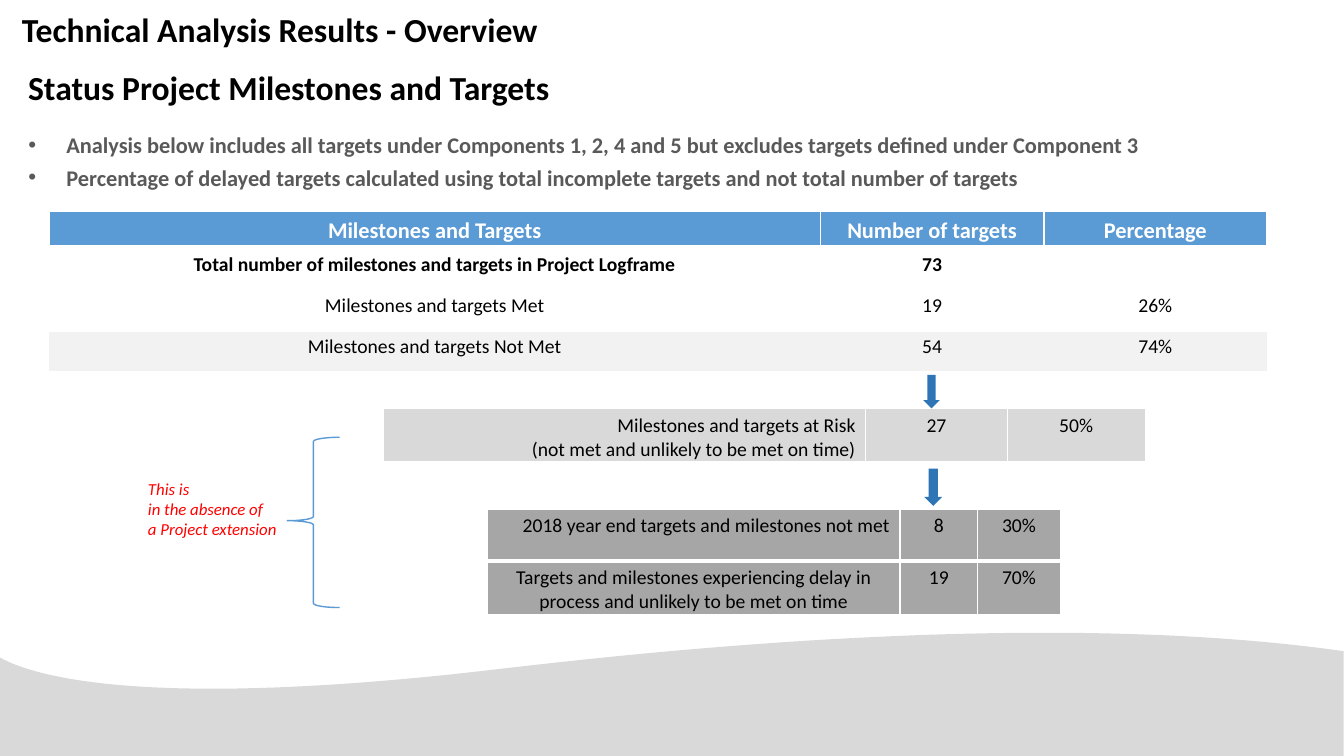
"""Build the overview slide on the status of project milestones and targets."""
from lxml.etree import SubElement
from pptx import Presentation
from pptx.dml.color import RGBColor
from pptx.enum.shapes import MSO_SHAPE
from pptx.enum.text import MSO_ANCHOR, MSO_AUTO_SIZE, PP_ALIGN
from pptx.oxml.ns import qn
from pptx.util import Cm, Pt

BLACK = RGBColor(0x00, 0x00, 0x00)
WHITE = RGBColor(0xFF, 0xFF, 0xFF)
RED = RGBColor(0xFF, 0x00, 0x00)
BLUE = RGBColor(0x5B, 0x9B, 0xD5)
DARK_BLUE = RGBColor(0x2E, 0x75, 0xB6)
TEXT_GREY = RGBColor(0x59, 0x59, 0x59)
PALE_GREY = RGBColor(0xF2, 0xF2, 0xF2)
LIGHT_GREY = RGBColor(0xD9, 0xD9, 0xD9)
MID_GREY = RGBColor(0xA6, 0xA6, 0xA6)
FONT = "Calibri"
CENTER, RIGHT, LEFT = PP_ALIGN.CENTER, PP_ALIGN.RIGHT, PP_ALIGN.LEFT

TITLE = "Technical Analysis Results - Overview"
HEADING = "Status Project Milestones and Targets"
REMARKS = [
    "Analysis below includes all targets under Components 1, 2, 4 and 5 but excludes targets defined under Component 3",
    "Percentage of delayed targets calculated using total incomplete targets and not total number of targets",
]
EXTENSION_NOTE = "This is\nin the absence of\na Project extension"

# Each row: texts, height, fill, text colour, size, bold, label alignment, bordered
STATUS_ROWS = [
    (("Milestones and Targets", "Number of targets", "Percentage"), 0.9, BLUE, WHITE, 16, True, CENTER, True),
    (("Total number of milestones and targets in Project Logframe", "73", ""),
     1.04, WHITE, BLACK, 14, True, CENTER, True),
    (("Milestones and targets Met", "19", "26%"), 1.04, WHITE, BLACK, 14, False, CENTER, True),
    (("Milestones and targets Not Met", "54", "74%"), 1.04, PALE_GREY, BLACK, 14, False, CENTER, False),
]
RISK_ROWS = [
    (("Milestones and targets at Risk\n(not met and unlikely to be met on time)", "27", "50%"),
     1.38, LIGHT_GREY, BLACK, 14, False, RIGHT, True),
]
DELAY_ROWS = [
    (("2018 year end targets and milestones not met", "8", "30%"), 1.3, MID_GREY, BLACK, 14, False, RIGHT, True),
    (("Targets and milestones experiencing delay in process and unlikely to be met on time", "19", "70%"),
     1.4, MID_GREY, BLACK, 14, False, CENTER, True),
]
TABLES = [
    (1.24, 5.33, (19.43, 5.64, 5.61), STATUS_ROWS),
    (9.65, 10.29, (12.17, 3.56, 3.48), RISK_ROWS),
    (12.29, 12.83, (10.39, 1.96, 2.08), DELAY_ROWS),
]
ARROWS = [(23.27, 9.45, 0.41, 0.84), (23.29, 11.81, 0.46, 0.94)]
BRACE = (7.24, 11.02, 1.32, 4.29)
WAVE_CURVES = [
    ((33.86, 16.41), (29.59, 15.8), (22.91, 15.65), (12.75, 16.84)),
    ((12.75, 16.84), (3.38, 17.96), (0.66, 16.97), (-0.05, 16.54)),
]
WAVE_BASE = [(-0.05, 19.05), (33.86, 19.05)]
CURVE_STEPS = 40


def curve_point(curve, t):
    """Return the point at t on a cubic curve."""
    weights = ((1 - t) ** 3, 3 * t * (1 - t) ** 2, 3 * t ** 2 * (1 - t), t ** 3)
    return tuple(sum(w * point[axis] for w, point in zip(weights, curve)) for axis in (0, 1))


def add_wave(slide):
    """Draw the grey wave along the foot of the slide."""
    outline = [curve_point(curve, step / CURVE_STEPS) for curve in WAVE_CURVES for step in range(CURVE_STEPS + 1)]
    (start, *rest) = [(Cm(x), Cm(y)) for x, y in outline + WAVE_BASE]
    builder = slide.shapes.build_freeform(*start)
    builder.add_line_segments(rest, close=True)
    wave = builder.convert_to_shape()
    wave.shadow.inherit = False
    wave.fill.solid()
    wave.fill.fore_color.rgb = LIGHT_GREY
    wave.line.fill.background()


def style_text(frame, size, color, bold=False, italic=False, alignment=LEFT):
    """Format every paragraph of a text frame alike."""
    for paragraph in frame.paragraphs:
        paragraph.alignment = alignment
        font = paragraph.font
        font.name, font.size, font.bold, font.italic = FONT, Pt(size), bold, italic
        font.color.rgb = color


def fill_box(box, place, text, size, color, bold=False, italic=False):
    """Place a text box or placeholder and write its text."""
    box.left, box.top, box.width, box.height = map(Cm, place)
    frame = box.text_frame
    frame.text = text
    frame.word_wrap = True
    frame.auto_size = MSO_AUTO_SIZE.NONE
    frame.vertical_anchor = MSO_ANCHOR.TOP
    style_text(frame, size, color, bold, italic)
    return frame


def set_borders(cell, bordered):
    """Give a cell white borders, or none."""
    properties = cell._tc.get_or_add_tcPr()
    for index, (side, width) in enumerate((("lnL", 1), ("lnR", 1), ("lnT", 1), ("lnB", 3))):
        line = SubElement(properties, qn(f"a:{side}"), w=str(Pt(width)))
        properties.insert(index, line)
        if bordered:
            SubElement(SubElement(line, qn("a:solidFill")), qn("a:srgbClr"), val=str(WHITE))
        else:
            SubElement(line, qn("a:noFill"))


def add_target_table(slide, left, top, widths, rows):
    """Add one table of targets, numbers and percentages."""
    height = sum(row[1] for row in rows)
    table = slide.shapes.add_table(
        len(rows), len(widths), Cm(left), Cm(top), Cm(sum(widths)), Cm(height)).table
    table.first_row = table.horz_banding = False
    for column, width in zip(table.columns, widths):
        column.width = Cm(width)
    for row_index, (texts, row_height, fill, color, size, bold, label_alignment, bordered) in enumerate(rows):
        table.rows[row_index].height = Cm(row_height)
        for column_index, text in enumerate(texts):
            cell = table.cell(row_index, column_index)
            cell.text = text
            cell.margin_top, cell.margin_bottom = Cm(0.13), Cm(0)
            cell.fill.solid()
            cell.fill.fore_color.rgb = fill
            alignment = CENTER if column_index else label_alignment
            style_text(cell.text_frame, size, color, bold, alignment=alignment)
            set_borders(cell, bordered)


def main():
    """Assemble and save the slide."""
    presentation = Presentation()
    presentation.slide_width, presentation.slide_height = Cm(33.87), Cm(19.05)
    slide = presentation.slides.add_slide(presentation.slide_layouts[1])
    add_wave(slide)

    fill_box(slide.shapes.title, (0.3, 0.1, 17.09, 1.27), TITLE, 24, BLACK, bold=True)
    remarks = fill_box(slide.placeholders[1], (0.46, 3.18, 32.79, 2.1), "\n".join(REMARKS), 16, TEXT_GREY, bold=True)
    for paragraph in remarks.paragraphs:
        paragraph.space_before, paragraph.space_after = Pt(0), Pt(4)
        properties = paragraph._p.get_or_add_pPr()
        properties.set("marL", str(Cm(0.96)))
        properties.set("indent", str(-Cm(0.96)))

    for table in TABLES:
        add_target_table(slide, *table)
    for place in ARROWS:
        arrow = slide.shapes.add_shape(MSO_SHAPE.DOWN_ARROW, *map(Cm, place))
        arrow.shadow.inherit = False
        arrow.fill.solid()
        arrow.fill.fore_color.rgb = DARK_BLUE
        arrow.line.fill.background()

    brace = slide.shapes.add_shape(MSO_SHAPE.LEFT_BRACE, *map(Cm, BRACE))
    brace.shadow.inherit = False
    brace.adjustments[0], brace.adjustments[1] = 0.08, 0.49
    brace.fill.background()
    brace.line.color.rgb = BLUE
    brace.line.width = Pt(1)

    note = slide.shapes.add_textbox(0, 0, 0, 0)
    fill_box(note, (3.48, 11.94, 4.27, 1.8), EXTENSION_NOTE, 12, RED, italic=True)
    heading = slide.shapes.add_textbox(0, 0, 0, 0)
    fill_box(heading, (0.46, 1.57, 17.55, 1.27), HEADING, 24, BLACK, bold=True)
    presentation.save("out.pptx")


if __name__ == "__main__":
    main()
